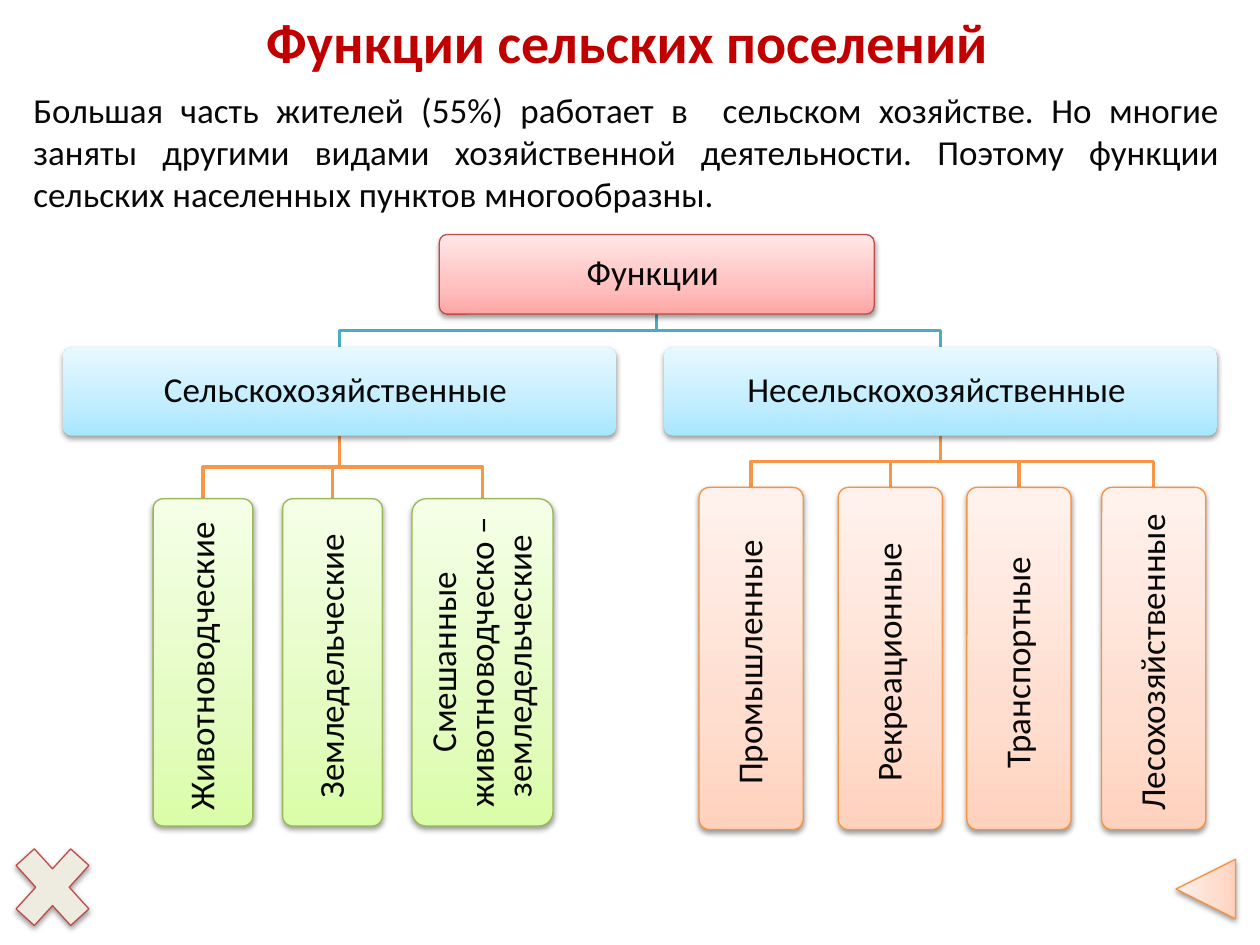
from copy import deepcopy
from dataclasses import dataclass, field

from lxml.etree import SubElement
from pptx import Presentation
from pptx.dml.color import RGBColor
from pptx.enum.shapes import MSO_SHAPE
from pptx.enum.text import MSO_ANCHOR, MSO_AUTO_SIZE, PP_ALIGN
from pptx.oxml.ns import qn
from pptx.shapes.autoshape import Shape
from pptx.slide import Slide
from pptx.util import Pt


@dataclass
class Style:
    stops: tuple[str, str, str]
    outline: str | None = None


@dataclass
class Node:
    text: str
    left: float
    top: float
    width: float
    height: float
    style: Style
    vertical: bool = False
    branch_color: str = ""
    children: list["Node"] = field(default_factory=list)

    @property
    def center(self) -> float:
        return self.left + self.width / 2

    @property
    def bottom(self) -> float:
        return self.top + self.height


RED = Style(("FFA6A5", "FFC0BF", "FFE7E7"), "BF4C48")
BLUE = Style(("A7E6FF", "C1EDFF", "E7F8FF"))
GREEN = Style(("DAFDA7", "E4FCC2", "F5FFE7"), "98B955")
ORANGE = Style(("FFD2BD", "FFDED0", "FFF2ED"), "F69240")
TEAL_LINE, ORANGE_LINE = "4BACC6", "F79646"
STOP_POSITIONS = (0, 0.35, 1)


def color(value: str) -> RGBColor:
    return RGBColor.from_string(value)


def write(box: Shape, text: str, *, size: float = 20, ink: str = "080808",
          bold: bool = False, align: PP_ALIGN = PP_ALIGN.CENTER,
          anchor: MSO_ANCHOR = MSO_ANCHOR.MIDDLE, spacing=0.9,
          wrap: bool = True, margins: tuple[float, float] = (6, 6),
          vertical: bool = False) -> None:
    frame = box.text_frame
    frame.auto_size = MSO_AUTO_SIZE.NONE
    frame.word_wrap = wrap
    frame.vertical_anchor = anchor
    frame.margin_left = frame.margin_right = Pt(margins[0])
    frame.margin_top = frame.margin_bottom = Pt(margins[1])
    if vertical:
        frame._txBody.bodyPr.set("vert", "vert270")
    para = frame.paragraphs[0]
    para.alignment = align
    para.line_spacing = spacing
    span = para.add_run()
    span.text = text
    span.font.name = "Calibri"
    span.font.size = Pt(size)
    span.font.bold = bold
    span.font.color.rgb = color(ink)


def add_soft_shadow(shape: Shape) -> None:
    shape.shadow.inherit = False
    effects = shape._element.spPr.find(qn("a:effectLst"))
    shadow = SubElement(effects, qn("a:outerShdw"), blurRad="40000",
                        dist="20000", dir="5400000", rotWithShape="0")
    ink = SubElement(shadow, qn("a:srgbClr"), val="000000")
    SubElement(ink, qn("a:alpha"), val="38000")


def set_gradient(shape: Shape, stops: tuple[str, str, str]) -> None:
    shape.fill.gradient()
    shape.fill.gradient_angle = 90
    stop_list = shape._element.spPr.find(".//" + qn("a:gsLst"))
    stop_list.insert(1, deepcopy(stop_list[0]))
    for stop, position, value in zip(shape.fill.gradient_stops, STOP_POSITIONS, stops):
        stop.position = position
        stop.color.rgb = color(value)


def set_outline(shape: Shape, value: str | None, width: float = 0.75) -> None:
    if value is None:
        shape.line.fill.background()
        return
    shape.line.color.rgb = color(value)
    shape.line.width = Pt(width)


def add_shape(page: Slide, kind: MSO_SHAPE, left: float, top: float,
              width: float, height: float, outline: str | None) -> Shape:
    shape = page.shapes.add_shape(kind, Pt(left), Pt(top), Pt(width), Pt(height))
    set_outline(shape, outline)
    add_soft_shadow(shape)
    return shape


def draw_branch(page: Slide, parent: Node, child: Node) -> None:
    middle = (parent.bottom + child.top) / 2
    points = [(parent.center, middle), (child.center, middle), (child.center, child.top)]
    builder = page.shapes.build_freeform(Pt(parent.center), Pt(parent.bottom))
    builder.add_line_segments([(Pt(x), Pt(y)) for x, y in points], close=False)
    branch = builder.convert_to_shape()
    branch.fill.background()
    branch.shadow.inherit = False
    set_outline(branch, parent.branch_color, 2)


def draw_tree(page: Slide, node: Node) -> None:
    for child in node.children:
        draw_branch(page, node, child)
    box = add_shape(page, MSO_SHAPE.ROUNDED_RECTANGLE, node.left, node.top,
                    node.width, node.height, node.style.outline)
    box.adjustments[0] = 0.1
    set_gradient(box, node.style.stops)
    write(box, node.text, vertical=node.vertical)
    for child in node.children:
        draw_tree(page, child)


def farm_leaf(text: str, left: float, width: float = 57) -> Node:
    return Node(text, left, 285, width, 187, GREEN, vertical=True)


def other_leaf(text: str, left: float) -> Node:
    return Node(text, left, 278.5, 59.5, 195.5, ORANGE, vertical=True)


def group(text: str, left: float, children: list[Node]) -> Node:
    return Node(text, left, 198.5, 316, 50.5, BLUE,
                branch_color=ORANGE_LINE, children=children)


FUNCTIONS = Node("Функции ", 251, 134, 248.5, 45.5, RED, branch_color=TEAL_LINE, children=[
    group("Сельскохозяйственные ", 36, [
        farm_leaf("Животноводческие ", 87.5),
        farm_leaf("Земледельческие ", 161.5),
        farm_leaf("Смешанные животноводческо – земледельческие ", 235.5, 80.5),
    ]),
    group("Несельскохозяйственные ", 379.5, [
        other_leaf("Промышленные ", 399.5),
        other_leaf("Рекреационные ", 479),
        other_leaf("Транспортные ", 552.5),
        other_leaf("Лесохозяйственные ", 629.5),
    ]),
])


def main() -> None:
    deck = Presentation()
    deck.slide_width, deck.slide_height = Pt(720), Pt(540)
    page = deck.slides.add_slide(deck.slide_layouts.get_by_name("Title Only"))

    # Title and introduction
    title = page.shapes.title
    title.left, title.top, title.width, title.height = Pt(142.5), Pt(0.5), Pt(432), Pt(46)
    write(title, "Функции сельских поселений", size=32, ink="C00000", bold=True,
          anchor=MSO_ANCHOR.TOP, spacing=1.0, wrap=False, margins=(7.2, 3.6))
    intro = page.shapes.add_textbox(Pt(12), Pt(47), Pt(692), Pt(80))
    write(intro, "Большая часть жителей (55%) работает в  сельском хозяйстве. "
          "Но многие заняты другими видами хозяйственной деятельности. "
          "Поэтому функции сельских населенных пунктов многообразны.",
          align=PP_ALIGN.JUSTIFY, anchor=MSO_ANCHOR.TOP, spacing=Pt(24),
          margins=(7.2, 3.6))

    # Tree of functions
    draw_tree(page, FUNCTIONS)

    # Navigation marks
    cross = add_shape(page, MSO_SHAPE.MATH_MULTIPLY, 0, 474, 60, 66, "BF4C48")
    cross.fill.solid()
    cross.fill.fore_color.rgb = color("EEECE1")
    back = add_shape(page, MSO_SHAPE.ISOSCELES_TRIANGLE, 672, 491, 34, 34, ORANGE.outline)
    back.rotation = 270
    set_gradient(back, ORANGE.stops)

    deck.save("out.pptx")


if __name__ == "__main__":
    main()
